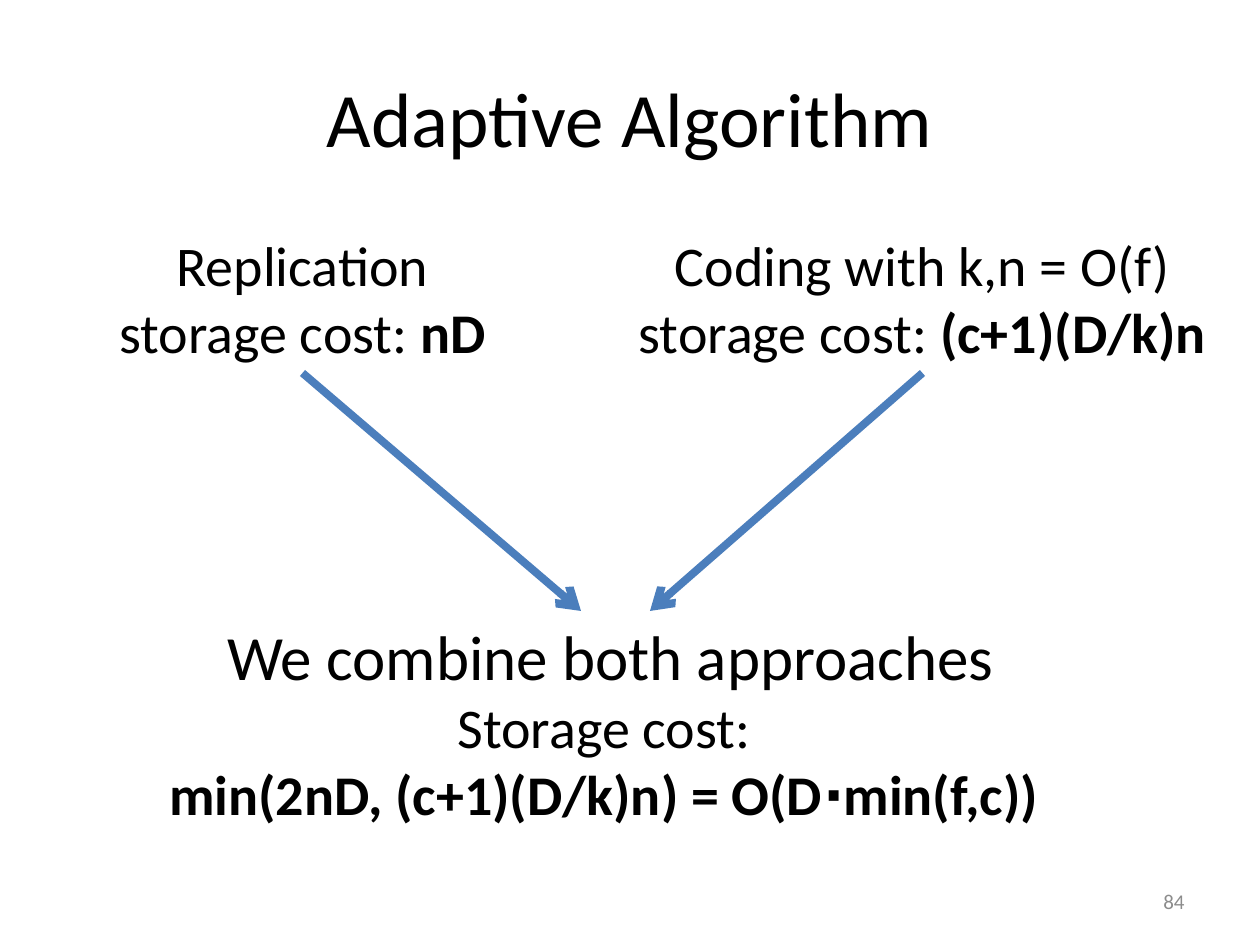
from dataclasses import dataclass

from lxml import etree
from pptx import Presentation
from pptx.dml.color import RGBColor
from pptx.enum.shapes import MSO_CONNECTOR
from pptx.enum.text import MSO_ANCHOR, PP_ALIGN
from pptx.oxml.ns import qn
from pptx.util import Emu, Pt

STRAIGHT = MSO_CONNECTOR.STRAIGHT
TOP, MIDDLE = MSO_ANCHOR.TOP, MSO_ANCHOR.MIDDLE
CENTER, RIGHT = PP_ALIGN.CENTER, PP_ALIGN.RIGHT
BOTTOM_SIDE = 2
PX_PER_INCH = 126


@dataclass(frozen=True)
class Theme:
    """Colours, font and type sizes of the slide."""
    font: str = "Calibri"
    ink: RGBColor = RGBColor(0, 0, 0)
    muted: RGBColor = RGBColor(0x8C, 0x8C, 0x8C)
    arrow: RGBColor = RGBColor(0x4B, 0x7E, 0xBC)
    arrow_width: float = 4.5
    title: int = 44
    lead: int = 36
    body: int = 32
    number: int = 12


THEME = Theme()


def px(length):
    """Turn pixels into EMU."""
    return Emu(round(length * 914400 / PX_PER_INCH))


def style(run, size, color=THEME.ink, bold=False):
    """Format one run."""
    run.font.name = THEME.font
    run.font.size = Pt(size)
    run.font.color.rgb = color
    run.font.bold = bold


def add_text(slide, box, lines, align=CENTER, anchor=TOP, color=THEME.ink):
    """Add a text box with one paragraph per (size, plain, bold) line."""
    label = slide.shapes.add_textbox(*map(px, box))
    frame = label.text_frame
    frame.word_wrap = True
    frame.vertical_anchor = anchor
    for index, (size, plain, strong) in enumerate(lines):
        paragraph = frame.add_paragraph() if index else frame.paragraphs[0]
        paragraph.alignment = align
        for wording, bold in ((plain, False), (strong, True)):
            if wording:
                run = paragraph.add_run()
                run.text = wording
                style(run, size, color, bold)
    return label


def add_title(slide, box, wording):
    """Place and format the title placeholder."""
    title = slide.shapes.title
    title.left, title.top, title.width, title.height = map(px, box)
    title.text_frame.text = wording
    title.text_frame.vertical_anchor = MIDDLE
    paragraph = title.text_frame.paragraphs[0]
    paragraph.alignment = CENTER
    style(paragraph.runs[0], THEME.title)


def add_approach(slide, box, name, cost):
    """Add an approach with its storage cost."""
    return add_text(slide, box, [(THEME.body, name, ""),
                                 (THEME.body, "storage cost: ", cost)])


def add_arrow(slide, approach, tip_x, tip_y):
    """Draw an arrow from the bottom of an approach to a tip."""
    arrow = slide.shapes.add_connector(
        STRAIGHT, approach.left + approach.width // 2,
        approach.top + approach.height, px(tip_x), px(tip_y))
    arrow.begin_connect(approach, BOTTOM_SIDE)
    arrow.line.color.rgb = THEME.arrow
    arrow.line.width = Pt(THEME.arrow_width)
    etree.SubElement(arrow.line._get_or_add_ln(), qn("a:tailEnd"), type="arrow")
    etree.SubElement(arrow._element.spPr, qn("a:effectLst"))


def add_combination(slide, box):
    """Add the combined approach with its storage cost."""
    add_text(slide, box, [
        (THEME.lead, "We combine both approaches", ""),
        (THEME.body, "Storage cost: ", ""),
        (THEME.body, "", "min(2nD, (c+1)(D/k)n) = O(D⋅min(f,c)) "),
    ])


def main():
    """Build and save the slide."""
    deck = Presentation()
    deck.slide_width, deck.slide_height = px(1260), px(945)
    slide = deck.slides.add_slide(deck.slide_layouts[5])
    add_title(slide, (63, 38, 1134, 158), "Adaptive Algorithm")
    replication = add_approach(slide, (-15, 224, 635, 149), "Replication", "nD")
    coding = add_approach(slide, (600, 224, 645, 149),
                          "Coding with k,n = O(f)", "(c+1)(D/k)n")
    for approach, tip_x in ((replication, 581), (coding, 650)):
        add_arrow(slide, approach, tip_x, 611)
    add_combination(slide, (15, 611, 1191, 224))
    add_text(slide, (903, 876, 294, 50), [(THEME.number, "84", "")],
             RIGHT, MIDDLE, THEME.muted)
    deck.save("out.pptx")


if __name__ == "__main__":
    main()
